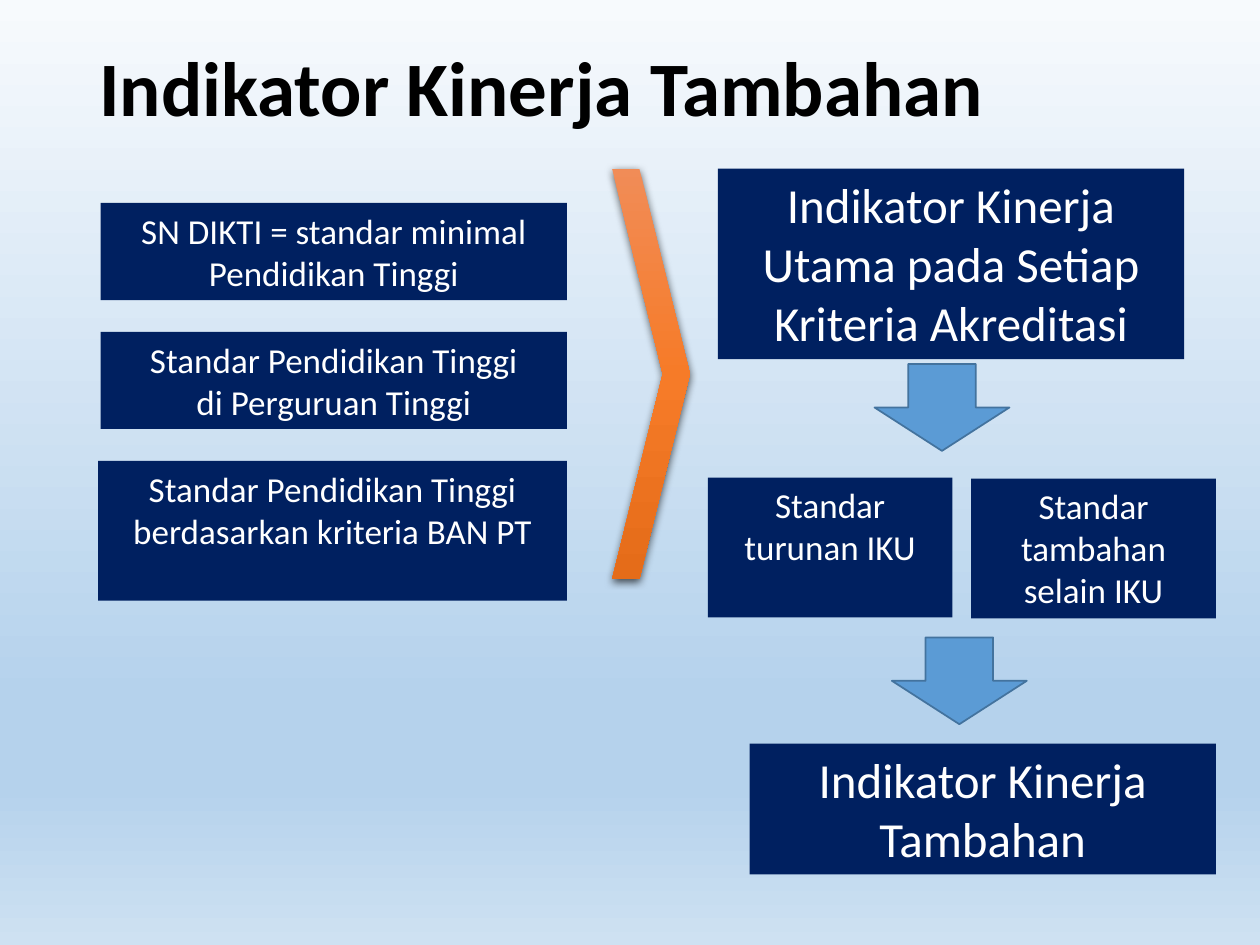
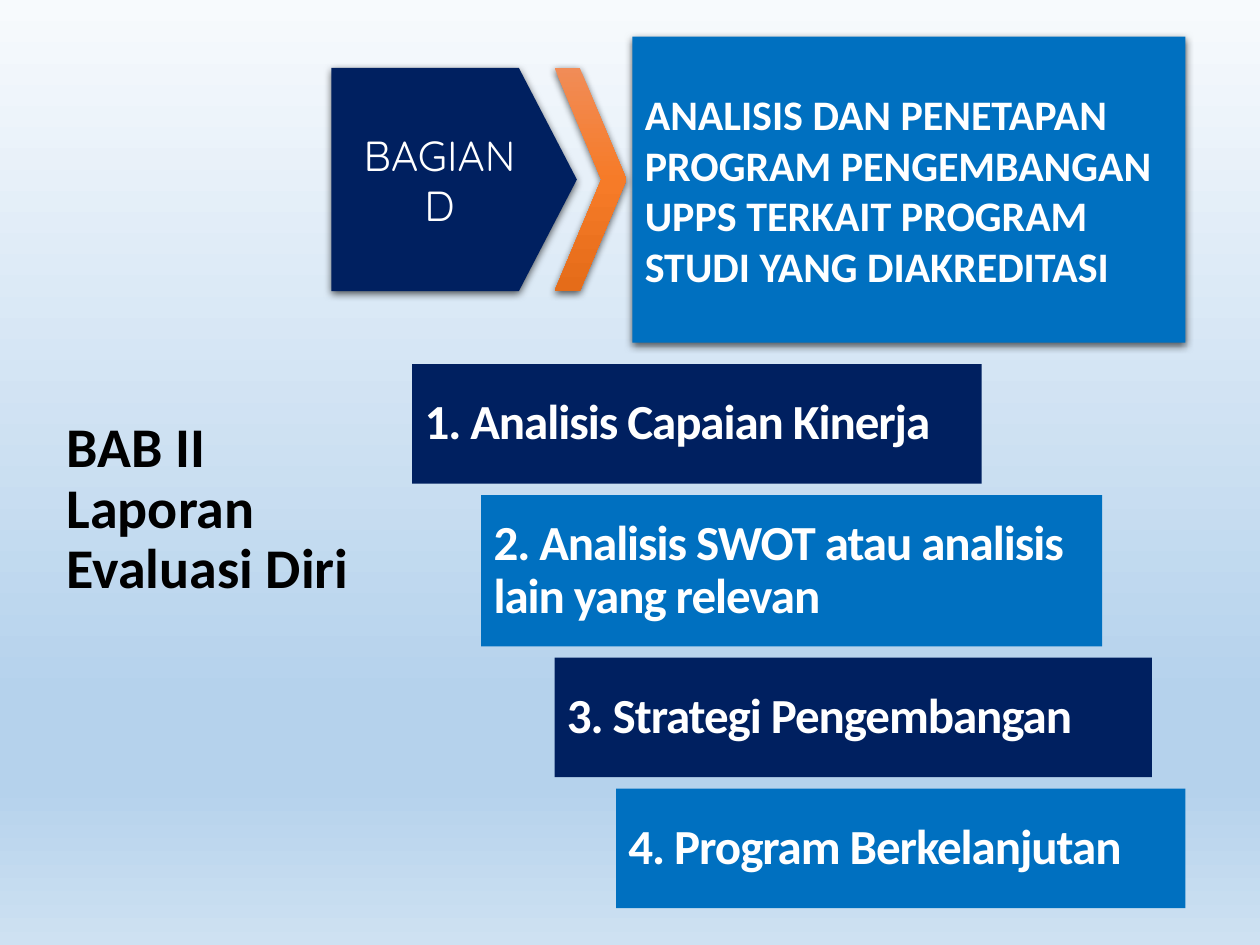
from lxml import etree
from pptx import Presentation
from pptx.dml.color import RGBColor
from pptx.enum.shapes import MSO_SHAPE
from pptx.enum.text import MSO_ANCHOR, MSO_AUTO_SIZE, PP_ALIGN
from pptx.oxml.ns import qn
from pptx.util import Cm, Pt

RECT, CHEVRON = MSO_SHAPE.RECTANGLE, MSO_SHAPE.CHEVRON
ARROW, PLATE = MSO_SHAPE.DOWN_ARROW, MSO_SHAPE.PENTAGON
TOP, MIDDLE = MSO_ANCHOR.TOP, MSO_ANCHOR.MIDDLE
LEFT, CENTER = PP_ALIGN.LEFT, PP_ALIGN.CENTER
FIXED = MSO_AUTO_SIZE.NONE

NAVY = RGBColor(0x00, 0x20, 0x60)
BLUE = RGBColor(0x00, 0x70, 0xC0)
SKY = RGBColor(0x5B, 0x9B, 0xD5)
EDGE = RGBColor(0x43, 0x73, 0x9E)
WHITE = RGBColor(0xFF, 0xFF, 0xFF)
BLACK = RGBColor(0x00, 0x00, 0x00)
PALE = RGBColor(0xF7, 0xFA, 0xFD)
MIST = RGBColor(0xB5, 0xD2, 0xEC)
HAZE = RGBColor(0xCE, 0xE1, 0xF2)
PEACH = RGBColor(0xF1, 0x8C, 0x57)
ORANGE = RGBColor(0xF6, 0x7B, 0x28)
RUST = RGBColor(0xE5, 0x6C, 0x19)

BACK = [(0, PALE), (74, MIST), (83, MIST), (100, HAZE)]
GLOW = [(0, PEACH), (50, ORANGE), (100, RUST)]
FONT = "Calibri"


def set_grad(fill, root, stops):
    fill.gradient()
    fill.gradient_angle = 270
    grad = next(root.iter(qn("a:gradFill")))
    group = grad.find(qn("a:gsLst"))
    for old in list(group):
        group.remove(old)
    for pos, color in stops:
        stop = etree.SubElement(group, qn("a:gs"), pos=str(pos * 1000))
        etree.SubElement(stop, qn("a:srgbClr"), val=str(color))


def add_shadow(shape):
    effects = next(shape.element.iter(qn("a:effectLst")))
    outer = etree.SubElement(effects, qn("a:outerShdw"), blurRad=str(Pt(4.5)),
                             dist=str(Pt(1.5)), dir="5400000", rotWithShape="0")
    color = etree.SubElement(outer, qn("a:srgbClr"), val=str(BLACK))
    etree.SubElement(color, qn("a:alpha"), val="63000")


def place(shape, box):
    shape.left, shape.top, shape.width, shape.height = map(Cm, box)


def write(shape, lines, size, color=WHITE, font=FONT, bold=False,
          align=LEFT, anchor=MIDDLE, space=None, track=None):
    frame = shape.text_frame
    frame.word_wrap = True
    frame.vertical_anchor = anchor
    for i, line in enumerate(lines):
        para = frame.add_paragraph() if i else frame.paragraphs[0]
        para.alignment = align
        if space:
            para.line_spacing = space
        for j, part in enumerate(line.split("\n")):
            if j:
                para.add_line_break()
            run = para.add_run()
            run.text = part
            run.font.size = Pt(size)
            run.font.name = font
            run.font.bold = bold
            run.font.color.rgb = color
            if track:
                run.font._element.set("spc", str(track))


def add_form(slide, kind, box, color=None, adjust=None, shadow=False):
    shape = slide.shapes.add_shape(kind, *map(Cm, box))
    shape.shadow.inherit = False
    shape.line.fill.background()
    if color:
        shape.fill.solid()
        shape.fill.fore_color.rgb = color
    if adjust:
        shape.adjustments[0] = adjust
    if shadow:
        add_shadow(shape)
    return shape


def add_chevron(slide, box):
    shape = add_form(slide, CHEVRON, box, adjust=0.65, shadow=True)
    set_grad(shape.fill, shape.element, GLOW)


def add_title(slide, text, box, size):
    title = slide.shapes.title
    place(title, box)
    title.text_frame.auto_size = FIXED
    write(title, [text], size, BLACK, bold=True, space=0.9)


def add_card(slide, box, lines, size=20):
    write(add_form(slide, RECT, box, NAVY), lines, size,
          align=CENTER, anchor=TOP)


def add_arrow(slide, left, top):
    shape = add_form(slide, ARROW, (left, top, 2.72, 1.75), SKY)
    shape.line.color.rgb = EDGE
    shape.line.width = Pt(1)


def add_bases(slide, left, top):
    cards = [
        (0.05, 1.96, ["SN DIKTI = standar minimal Pendidikan Tinggi"]),
        (0.05, 1.96, ["Standar Pendidikan Tinggi", "di Perguruan Tinggi"]),
        (0, 2.82, ["Standar Pendidikan Tinggi", "berdasarkan kriteria BAN PT"]),
    ]
    for i, (shift, high, lines) in enumerate(cards):
        box = (left + shift, top + i * 2.6, 9.45 - shift, high)
        add_card(slide, box, lines)


def add_flow(slide, left, top):
    cards = [
        (0.2, 0, 9.4, 3.84, 28,
         "Indikator Kinerja Utama pada Setiap Kriteria Akreditasi"),
        (0, 6.23, 4.93, 2.82, 20, "Standar turunan IKU"),
        (5.31, 6.25, 4.93, 2.82, 20, "Standar tambahan selain IKU"),
        (0.84, 11.59, 9.4, 2.64, 28, "Indikator Kinerja Tambahan"),
    ]
    for x, y, wide, high, size, text in cards:
        add_card(slide, (left + x, top + y, wide, high), [text], size)
    for x, y in [(3.36, 3.94), (3.71, 9.45)]:
        add_arrow(slide, left + x, top + y)


def add_header(slide, left, top):
    head = add_form(slide, RECT, (left + 6.07, top, 11.15, 6.17), BLUE,
                    shadow=True)
    write(head, ["ANALISIS DAN PENETAPAN PROGRAM PENGEMBANGAN UPPS TERKAIT "
                 "PROGRAM STUDI YANG DIAKREDITASI"], 24, bold=True)
    add_chevron(slide, (left + 4.5, top + 0.63, 1.45, 4.5))
    plate = add_form(slide, PLATE, (left, top + 0.63, 4.95, 4.5), NAVY,
                     adjust=0.26, shadow=True)
    write(plate, ["BAGIAN", "D"], 24, font="Quicksand", align=CENTER)


def add_steps(slide, left, top):
    steps = [
        (0, 11.48, 2.41, "Analisis Capaian Kinerja"),
        (1.39, 12.52, 3.05, "Analisis SWOT atau analisis lain yang relevan"),
        (2.87, 12.04, 2.41, "Strategi Pengembangan"),
        (4.11, 11.48, 2.41, "Program Berkelanjutan"),
    ]
    for i, (shift, wide, high, text) in enumerate(steps):
        bar = add_form(slide, RECT, (left + shift, top, wide, high),
                       BLUE if i % 2 else NAVY)
        write(bar, [f"{i + 1}. {text}"], 28, bold=True, space=0.9, track=-60)
        top += high + 0.23


def build_extra(slide):
    add_title(slide, "Indikator Kinerja Tambahan", (1.75, 0, 22.3, 3.68), 44)
    add_bases(slide, 1.98, 4.09)
    add_chevron(slide, (12.34, 3.4, 1.57, 8.28))
    add_flow(slide, 14.27, 3.4)


def build_part(slide):
    add_title(slide, "BAB II\nLaporan Evaluasi Diri",
              (1.09, 6.83, 6.32, 6.91), 32)
    add_header(slide, 6.68, 0.74)
    add_steps(slide, 8.31, 7.34)


def main():
    deck = Presentation()
    deck.slide_width, deck.slide_height = Cm(25.4), Cm(19.05)
    master = deck.slide_master
    set_grad(master.background.fill, master.element, BACK)
    for build in (build_extra, build_part):
        build(deck.slides.add_slide(deck.slide_layouts[5]))
    deck.save("out.pptx")


if __name__ == "__main__":
    main()
